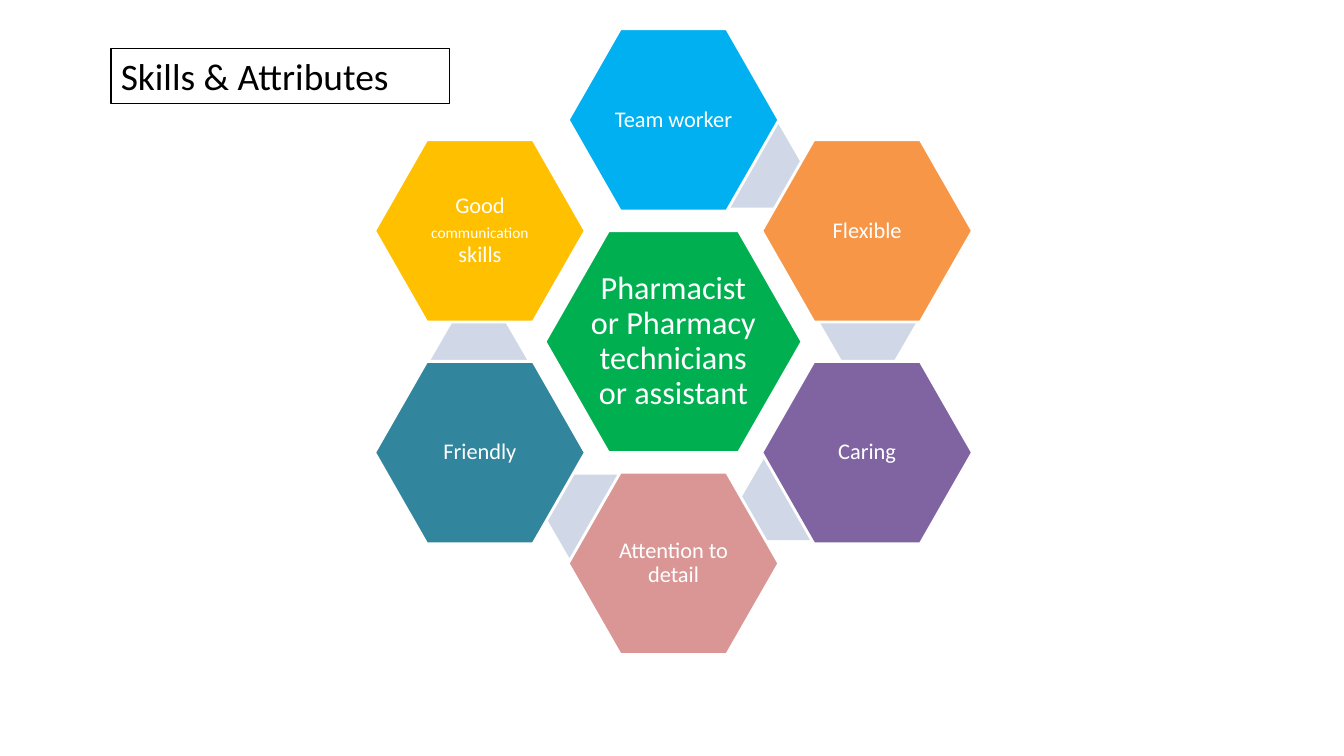
from dataclasses import dataclass

from pptx import Presentation
from pptx.dml.color import RGBColor
from pptx.enum.shapes import MSO_SHAPE as Preset
from pptx.enum.text import MSO_ANCHOR as Anchor, MSO_AUTO_SIZE as AutoSize, PP_ALIGN as Align
from pptx.shapes.autoshape import Shape
from pptx.slide import Slide
from pptx.text.text import _Paragraph as Paragraph
from pptx.util import Inches, Pt

FONT = "Calibri"
COLORS = {
    "white": "FFFFFF", "black": "000000", "link": "D0D8E8",
    "green": "00B050", "blue": "00B0F0", "orange": "F79646", "purple": "8064A2",
    "pink": "D99694", "teal": "31859C", "yellow": "FFC000",
}

# Hexagon layout, in inches
CENTER_X, CENTER_Y = 6.68, 3.39
COLUMN_STEP = 1.92
ROW_STEP = 1.1
HUB_SIZE = (2.55, 2.2)
SKILL_SIZE = (2.09, 1.81)
LINK_SIZE = (0.96, 0.83)
LABEL_RATIO = 0.67


@dataclass(frozen=True)
class Phrase:
    text: str
    size: float


@dataclass(frozen=True)
class Skill:
    column: int  # steps right of the hub
    row: int  # steps below the hub
    color: str
    phrases: tuple[Phrase, ...]
    link: tuple[float, float] | None = None  # left and top of the linking hexagon


SKILLS = (
    Skill(0, -2, "blue", (Phrase("Team worker", 16),), (7, 1.23)),
    Skill(1, -1, "orange", (Phrase("Flexible", 16),), (8.13, 2.78)),
    Skill(1, 1, "purple", (Phrase("Caring", 16),), (7.35, 4.53)),
    Skill(0, 2, "pink", (Phrase("Attention to detail", 16),), (5.41, 4.71)),
    Skill(-1, 1, "teal", (Phrase("Friendly", 16),), (4.27, 3.16)),
    Skill(-1, -1, "yellow", (Phrase("Good ", 16), Phrase("communication", 11),
                             Phrase(" skills", 16))),
)


def color(name: str) -> RGBColor:
    return RGBColor.from_string(COLORS[name])


def add_run(paragraph: Paragraph, phrase: Phrase, color_name: str) -> None:
    run = paragraph.add_run()
    run.text = phrase.text
    run.font.name = FONT
    run.font.size = Pt(phrase.size)
    run.font.color.rgb = color(color_name)


def add_hexagon(slide: Slide, left: float, top: float, size: tuple[float, float],
                fill: str, point: float) -> Shape:
    shape = slide.shapes.add_shape(Preset.HEXAGON, Inches(left), Inches(top),
                                   Inches(size[0]), Inches(size[1]))
    shape.shadow.inherit = False
    shape.adjustments[0] = point
    shape.fill.solid()
    shape.fill.fore_color.rgb = color(fill)
    shape.line.fill.background()
    return shape


def add_label(slide: Slide, x: float, y: float, size: tuple[float, float],
              phrases: tuple[Phrase, ...], inset: float) -> None:
    width, height = (length * LABEL_RATIO for length in size)
    box = slide.shapes.add_textbox(Inches(x - width / 2), Inches(y - height / 2),
                                   Inches(width), Inches(height))
    frame = box.text_frame
    frame.word_wrap = True
    frame.vertical_anchor = Anchor.MIDDLE
    frame.margin_left = frame.margin_right = Inches(inset)
    frame.margin_top = frame.margin_bottom = Inches(inset)
    paragraph = frame.paragraphs[0]
    paragraph.alignment = Align.CENTER
    paragraph.line_spacing = 0.9
    for phrase in phrases:
        add_run(paragraph, phrase, "white")


def add_cell(slide: Slide, x: float, y: float, size: tuple[float, float], fill: str,
             phrases: tuple[Phrase, ...], inset: float) -> None:
    shape = add_hexagon(slide, x - size[0] / 2, y - size[1] / 2, size, fill, 0.286)
    shape.line.color.rgb = color("white")
    shape.line.width = Pt(2)
    add_label(slide, x, y, size, phrases, inset)


def add_title(slide: Slide) -> None:
    shape = slide.shapes.add_shape(Preset.RECTANGLE, Inches(1.1), Inches(0.48),
                                   Inches(3.36), Inches(0.55))
    shape.shadow.inherit = False
    shape.fill.background()
    shape.line.color.rgb = color("black")
    shape.line.width = Pt(1)
    frame = shape.text_frame
    frame.word_wrap = True
    frame.auto_size = AutoSize.SHAPE_TO_FIT_TEXT
    frame.vertical_anchor = Anchor.TOP
    paragraph = frame.paragraphs[0]
    paragraph.alignment = Align.LEFT
    add_run(paragraph, Phrase("Skills & Attributes", 26.7), "black")


def main() -> None:
    presentation = Presentation()
    presentation.slide_width = Inches(13.33)
    presentation.slide_height = Inches(7.5)
    slide = presentation.slides.add_slide(presentation.slide_layouts[6])

    # Hub
    hub_text = Phrase("Pharmacist or Pharmacy technicians or assistant", 23)
    add_cell(slide, CENTER_X, CENTER_Y, HUB_SIZE, "green", (hub_text,), 0.03)

    # Ring of skills, each over its link
    for skill in SKILLS:
        if skill.link:
            add_hexagon(slide, *skill.link, LINK_SIZE, "link", 0.289)
        add_cell(slide, CENTER_X + skill.column * COLUMN_STEP,
                 CENTER_Y + skill.row * ROW_STEP, SKILL_SIZE, skill.color, skill.phrases, 0.02)

    # Title
    add_title(slide)
    presentation.save("out.pptx")


if __name__ == "__main__":
    main()
